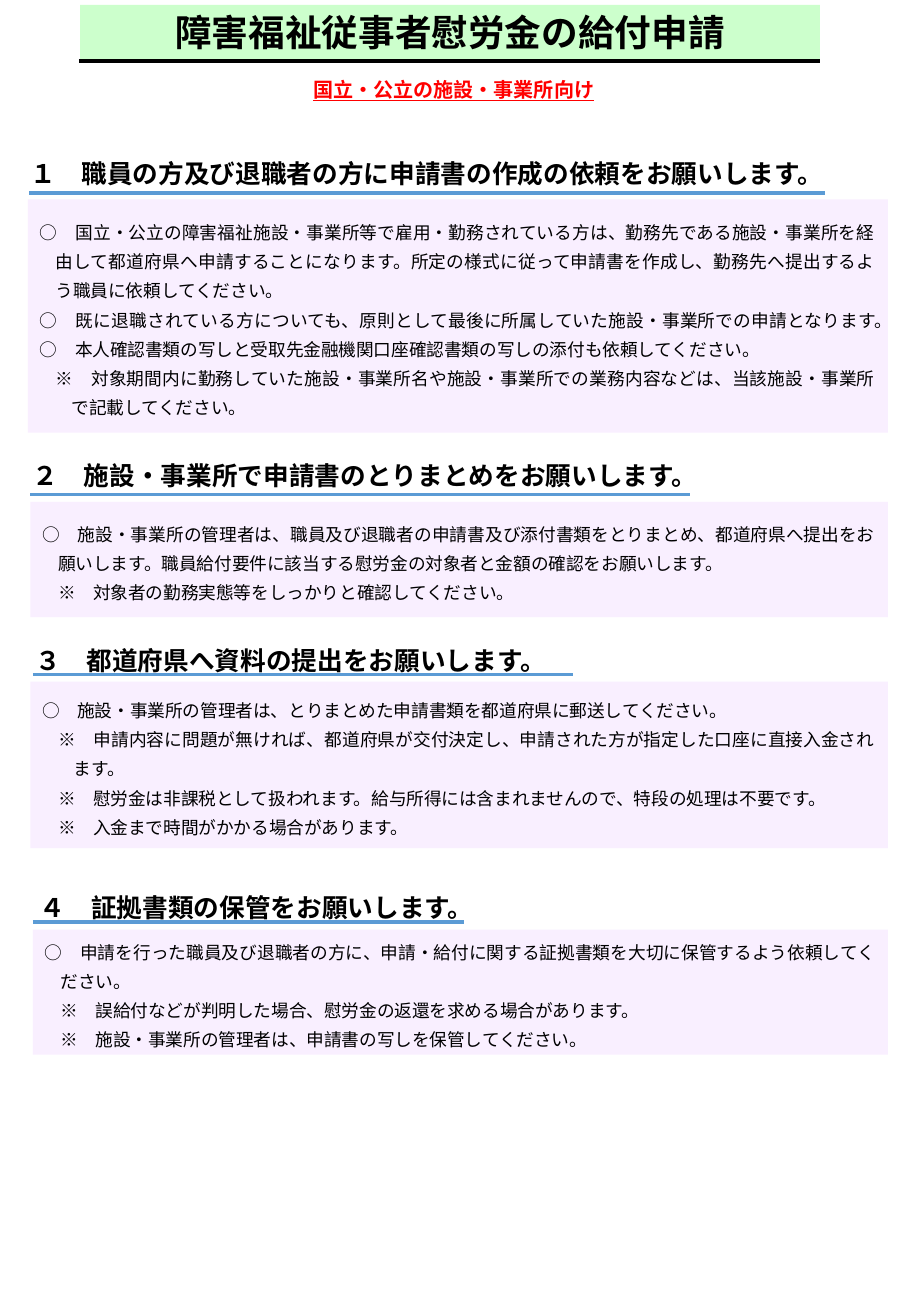
"""Build the one-page guide to applying for the welfare workers' bonus."""
from dataclasses import dataclass
from typing import Any

from lxml.etree import SubElement
from pptx import Presentation
from pptx.dml.color import RGBColor
from pptx.enum.shapes import MSO_CONNECTOR as Connector, MSO_SHAPE as Shape
from pptx.enum.text import MSO_ANCHOR as Anchor, PP_ALIGN as Align
from pptx.oxml.ns import qn
from pptx.util import Inches, Pt

FONT = "Noto Sans CJK JP"
BLACK = RGBColor(0x00, 0x00, 0x00)
RED = RGBColor(0xFF, 0x00, 0x00)
BLUE = RGBColor(0x5B, 0x9B, 0xD5)
LILAC = RGBColor(0xF9, 0xEF, 0xFF)
GREEN = RGBColor(0xCC, 0xFF, 0xCC)

TITLE = {"size": Pt(21.7), "bold": True}
SUBTITLE = {"size": Pt(11.9), "bold": True, "underline": True}
HEADING = {"size": Pt(15.2), "bold": True}
BODY = {"size": Pt(10.5)}
CENTERED = {"alignment": Align.CENTER}
LEFT = {"alignment": Align.LEFT}
JUSTIFIED = {"alignment": Align.JUSTIFY, "line_spacing": Pt(17.3)}

HANG = 0.13
PANEL_RIGHT = 7.31


@dataclass(frozen=True)
class Area:
    left: float
    top: float
    width: float
    height: float

    def lengths(self) -> list[int]:
        return [Inches(n) for n in (self.left, self.top, self.width, self.height)]


@dataclass(frozen=True)
class Rule:
    left: float
    right: float
    y: float


@dataclass(frozen=True)
class Section:
    heading: str
    heading_area: Area
    rule: Rule
    panel_left: float
    panel_top: float
    panel_height: float
    lines: tuple[str, ...]


SECTIONS = (
    Section(
        "１　職員の方及び退職者の方に申請書の作成の依頼をお願いします。",
        Area(0.15, 1.1, 6.95, 0.66), Rule(0.24, 6.79, 1.59), 0.23, 1.64, 1.92,
        (
            "○　国立・公立の障害福祉施設・事業所等で雇用・勤務されている方は、勤務先である施設・事業所を経由して"
            "都道府県へ申請することになります。所定の様式に従って申請書を作成し、勤務先へ提出するよう職員に依頼してください。",
            "○　既に退職されている方についても、原則として最後に所属していた施設・事業所での申請となります。",
            "○　本人確認書類の写しと受取先金融機関口座確認書類の写しの添付も依頼してください。",
            "※　対象期間内に勤務していた施設・事業所名や施設・事業所での業務内容などは、当該施設・事業所で記載してください。",
        ),
    ),
    Section(
        "２　施設・事業所で申請書のとりまとめをお願いします。",
        Area(0.17, 3.63, 5.76, 0.57), Rule(0.25, 5.68, 4.07), 0.25, 4.13, 0.95,
        (
            "○　施設・事業所の管理者は、職員及び退職者の申請書及び添付書類をとりまとめ、都道府県へ提出をお願いします。"
            "職員給付要件に該当する慰労金の対象者と金額の確認をお願いします。",
            "※　対象者の勤務実態等をしっかりと確認してください。",
        ),
    ),
    Section(
        "３　都道府県へ資料の提出をお願いします。",
        Area(0.19, 5.15, 4.61, 0.57), Rule(0.27, 4.72, 5.55), 0.25, 5.61, 1.37,
        (
            "○　施設・事業所の管理者は、とりまとめた申請書類を都道府県に郵送してください。",
            "※　申請内容に問題が無ければ、都道府県が交付決定し、申請された方が指定した口座に直接入金されます。",
            "※　慰労金は非課税として扱われます。給与所得には含まれませんので、特段の処理は不要です。",
            "※　入金まで時間がかかる場合があります。",
        ),
    ),
    Section(
        "４　証拠書類の保管をお願いします。",
        Area(0.23, 7.18, 4.58, 0.57), Rule(0.27, 3.82, 7.59), 0.27, 7.65, 1.03,
        (
            "○　申請を行った職員及び退職者の方に、申請・給付に関する証拠書類を大切に保管するよう依頼してください。",
            "※　誤給付などが判明した場合、慰労金の返還を求める場合があります。",
            "※　施設・事業所の管理者は、申請書の写しを保管してください。",
        ),
    ),
)


def apply(target: Any, values: dict[str, Any]) -> None:
    for name, value in values.items():
        setattr(target, name, value)


def write(box: Any, lines: tuple[str, ...], font: dict[str, Any],
          layout: dict[str, Any], color: RGBColor = BLACK) -> None:
    frame = box.text_frame
    apply(frame, {"word_wrap": True, "vertical_anchor": Anchor.MIDDLE})
    for index, line in enumerate(lines):
        para = frame.add_paragraph() if index else frame.paragraphs[0]
        apply(para, layout)
        if layout is JUSTIFIED:
            depth = 2 if line.startswith("※") else 1
            properties = para._p.get_or_add_pPr()
            properties.set("marL", str(Inches(HANG * depth)))
            properties.set("indent", str(-Inches(HANG)))
        span = para.add_run()
        span.text = line
        apply(span.font, {"name": FONT, **font})
        span.font.color.rgb = color
        SubElement(span._r.get_or_add_rPr(), qn("a:ea"), typeface=FONT)


def add_text(page: Any, area: Area, text: str, font: dict[str, Any],
             layout: dict[str, Any], color: RGBColor = BLACK) -> None:
    write(page.shapes.add_textbox(*area.lengths()), (text,), font, layout, color)


def add_panel(page: Any, area: Area, fill: RGBColor, lines: tuple[str, ...],
              font: dict[str, Any], layout: dict[str, Any]) -> None:
    panel = page.shapes.add_shape(Shape.RECTANGLE, *area.lengths())
    panel.shadow.inherit = False
    panel.fill.solid()
    panel.fill.fore_color.rgb = fill
    panel.line.fill.background()
    write(panel, lines, font, layout)


def add_rule(page: Any, rule: Rule, color: RGBColor) -> None:
    ends = (Inches(n) for n in (rule.left, rule.y, rule.right, rule.y))
    line = page.shapes.add_connector(Connector.STRAIGHT, *ends)
    line.line.color.rgb = color
    line.line.width = Pt(2.25)
    SubElement(line._element.spPr, qn("a:effectLst"))


def add_section(page: Any, section: Section) -> None:
    add_text(page, section.heading_area, section.heading, HEADING, LEFT)
    add_rule(page, section.rule, BLUE)
    area = Area(section.panel_left, section.panel_top,
                PANEL_RIGHT - section.panel_left, section.panel_height)
    add_panel(page, area, LILAC, section.lines, BODY, JUSTIFIED)


def main() -> None:
    deck = Presentation()
    apply(deck, {"slide_width": Inches(7.5), "slide_height": Inches(10.83)})
    page = deck.slides.add_slide(deck.slide_layouts[6])
    add_text(page, Area(0.69, 0.58, 6.09, 0.31), "国立・公立の施設・事業所向け",
             SUBTITLE, CENTERED, RED)
    for section in SECTIONS:
        add_section(page, section)
    add_panel(page, Area(0.66, 0.04, 6.09, 0.45), GREEN,
              ("障害福祉従事者慰労金の給付申請",), TITLE, CENTERED)
    add_rule(page, Rule(0.65, 6.75, 0.5), BLACK)
    deck.save("out.pptx")


if __name__ == "__main__":
    main()
